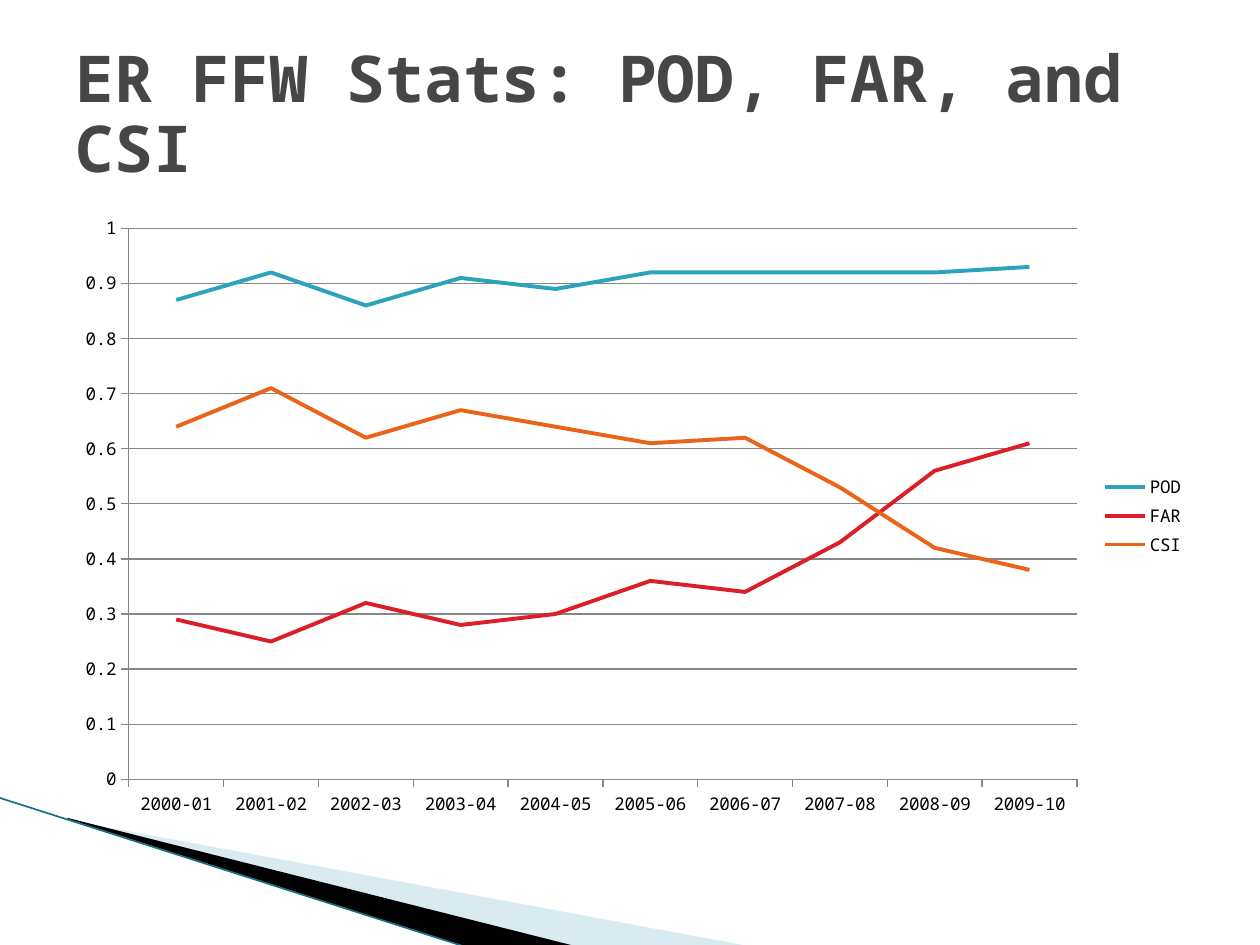
from dataclasses import dataclass

from lxml import etree
from pptx import Presentation
from pptx import util as u
from pptx.chart import data as chart_data
from pptx.dml.color import RGBColor
from pptx.enum import chart as charts, shapes, text
from pptx.oxml import ns

FONT = "Noto Sans Mono"
BLACK = RGBColor(0x00, 0x00, 0x00)
TITLE_GREY = RGBColor(0x46, 0x46, 0x46)
GRID_GREY = RGBColor(0x86, 0x86, 0x86)
PALE_BLUE = RGBColor(0xA0, 0xCB, 0xDC)
EDGE_TEAL = RGBColor(0x1B, 0x6F, 0x85)
POD_TEAL = RGBColor(0x2D, 0xA2, 0xBF)
FAR_RED = RGBColor(0xDA, 0x1F, 0x28)
CSI_ORANGE = RGBColor(0xEB, 0x64, 0x1B)


@dataclass
class Wedge:
    points: list[tuple[float, float]]
    color: RGBColor
    opacity: int = 100


@dataclass
class Score:
    name: str
    values: list[float]
    color: RGBColor


WEDGES = [
    Wedge([(0.55, 6.51), (5.95, 7.51), (4.56, 7.51), (0.55, 6.5)], PALE_BLUE, 40),
    Wedge([(0.53, 6.49), (4.57, 7.51), (3.72, 7.52), (0.54, 6.5)], BLACK),
]
SEASONS = [f"{year}-{(year + 1) % 100:02d}" for year in range(2000, 2010)]
SCORES = [
    Score("POD", [0.87, 0.92, 0.86, 0.91, 0.89, 0.92, 0.92, 0.92, 0.92, 0.93], POD_TEAL),
    Score("FAR", [0.29, 0.25, 0.32, 0.28, 0.3, 0.36, 0.34, 0.43, 0.56, 0.61], FAR_RED),
    Score("CSI", [0.64, 0.71, 0.62, 0.67, 0.64, 0.61, 0.62, 0.53, 0.42, 0.38], CSI_ORANGE),
]


def apply(target, formats: dict) -> None:
    for name, value in formats.items():
        setattr(target, name, value)


def draw_line(line, color: RGBColor, width: float) -> None:
    line.color.rgb = color
    line.width = u.Pt(width)


def draw_wedge(page, wedge: Wedge) -> None:
    points = [(u.Inches(x), u.Inches(y)) for x, y in wedge.points]
    builder = page.shapes.build_freeform(*points[0])
    builder.add_line_segments(points[1:], close=True)
    shape = builder.convert_to_shape()
    shape.shadow.inherit = False
    shape.fill.solid()
    shape.fill.fore_color.rgb = wedge.color
    shape.line.fill.background()
    if wedge.opacity < 100:
        color = shape.fill._xPr.find(".//" + ns.qn("a:srgbClr"))
        etree.SubElement(color, ns.qn("a:alpha"), val=str(wedge.opacity * 1000))


def draw_edge(page) -> None:
    edge = page.shapes.add_connector(
        shapes.MSO_CONNECTOR.STRAIGHT,
        u.Inches(-0.01), u.Inches(6.33), u.Inches(3.71), u.Inches(7.52))
    draw_line(edge.line, EDGE_TEAL, 0.95)
    etree.SubElement(edge._element.spPr, ns.qn("a:effectLst"))


def write_title(page) -> None:
    title = page.shapes.title
    apply(title, dict(left=u.Inches(0.5), top=u.Inches(0.3),
                      width=u.Inches(9), height=u.Inches(1.25)))
    box = title.text_frame
    apply(box, dict(word_wrap=True, auto_size=text.MSO_AUTO_SIZE.NONE,
                    vertical_anchor=text.MSO_ANCHOR.MIDDLE))
    para = box.paragraphs[0]
    apply(para, dict(alignment=text.PP_ALIGN.LEFT, line_spacing=0.9))
    span = para.add_run()
    span.text = "ER FFW Stats: POD, FAR, and CSI"
    apply(span.font, dict(name=FONT, size=u.Pt(36.9), bold=True))
    span.font.color.rgb = TITLE_GREY


def draw_chart(page) -> None:
    data = chart_data.CategoryChartData()
    data.categories = SEASONS
    for score in SCORES:
        data.add_series(score.name, score.values)
    chart = page.shapes.add_chart(
        charts.XL_CHART_TYPE.LINE, u.Inches(0.5), u.Inches(1.62),
        u.Inches(9), u.Inches(4.95), data).chart
    apply(chart, dict(has_title=False, has_legend=True))
    apply(chart.font, dict(name=FONT, size=u.Pt(10)))
    chart.font.color.rgb = BLACK
    apply(chart.legend, dict(position=charts.XL_LEGEND_POSITION.RIGHT,
                             include_in_layout=False))
    for axis in (chart.category_axis, chart.value_axis):
        axis.major_tick_mark = charts.XL_TICK_MARK.OUTSIDE
        draw_line(axis.format.line, GRID_GREY, 0.75)
    apply(chart.value_axis, dict(minimum_scale=0, maximum_scale=1, major_unit=0.1,
                                 has_major_gridlines=True))
    draw_line(chart.value_axis.major_gridlines.format.line, GRID_GREY, 0.75)
    chart.plots[0].vary_by_categories = False
    for series, score in zip(chart.plots[0].series, SCORES):
        series.smooth = False
        series.marker.style = charts.XL_MARKER_STYLE.NONE
        draw_line(series.format.line, score.color, 2.25)


def main() -> None:
    deck = Presentation()
    apply(deck, dict(slide_width=u.Inches(10), slide_height=u.Inches(7.5)))
    page = deck.slides.add_slide(deck.slide_layouts[5])
    for wedge in WEDGES:
        draw_wedge(page, wedge)
    draw_edge(page)
    write_title(page)
    draw_chart(page)
    deck.save("out.pptx")


if __name__ == "__main__":
    main()
